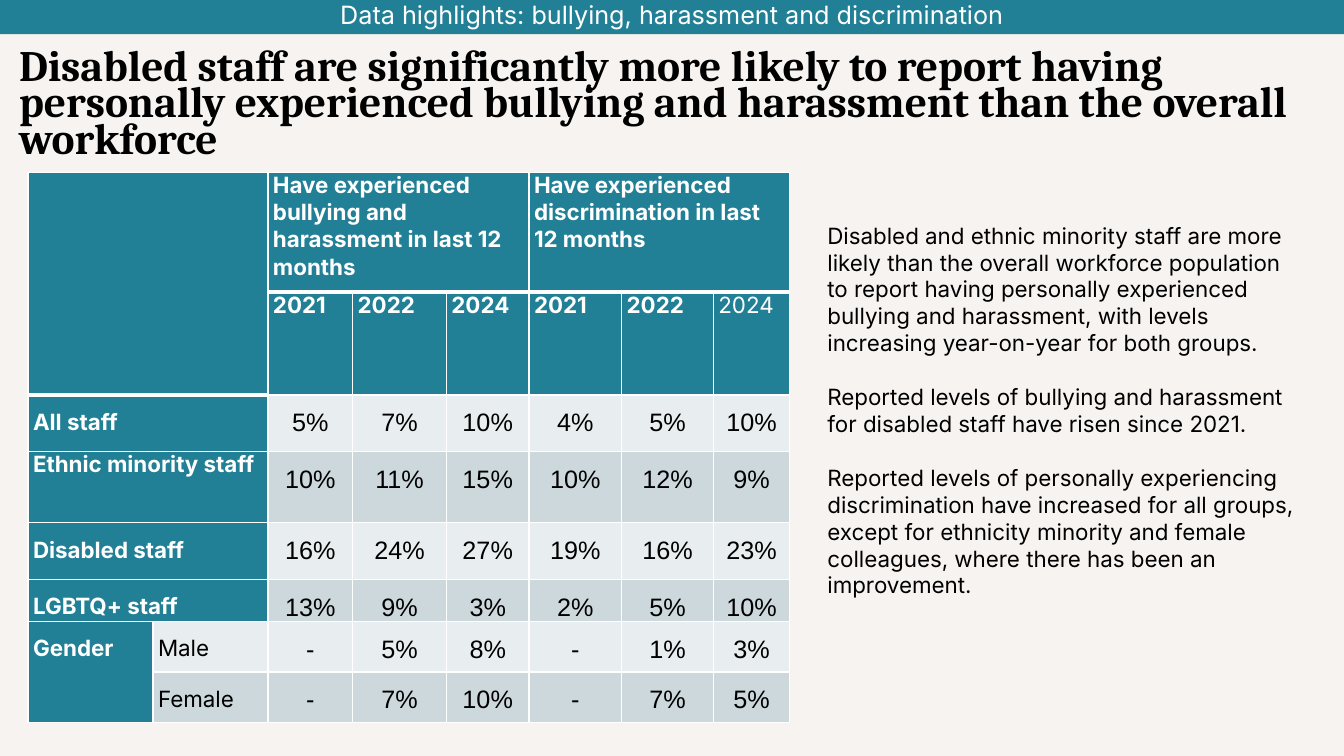
"""Build the slide on bullying, harassment and discrimination data."""
from lxml.etree import SubElement
from pptx import Presentation
from pptx.dml.color import RGBColor
from pptx.enum.shapes import MSO_SHAPE
from pptx.enum.text import MSO_ANCHOR, PP_ALIGN
from pptx.oxml.ns import qn
from pptx.util import Pt

TEAL, WHITE, BLACK = "228096", "FFFFFF", "000000"
BANDS = ["E8EDEF", "CDD8DD"]
COLUMNS = [89.3, 82.1, 60.5, 67, 59, 66.2, 65.5, 54.7]
ROWS = [85.7, 73.4, 40.3, 51.1, 40.3, 28.8, 36, 36]
MERGES = [(0, 0, 1, 1), (0, 2, 0, 4), (0, 5, 0, 7), (6, 0, 7, 0)]
MERGES += [(row, 0, row, 1) for row in range(2, 6)]
CELLS = [
    ["", "", "Have experienced bullying and harassment in last 12 months", "", "",
     "Have experienced discrimination in last 12 months", "", ""],
    ["", "", "2021", "2022", "2024", "2021", "2022", "2024"],
    ["All staff", "", "5%", "7%", "10%", "4%", "5%", "10%"],
    ["Ethnic minority staff", "", "10%", "11%", "15%", "10%", "12%", "9%"],
    ["Disabled staff", "", "16%", "24%", "27%", "19%", "16%", "23%"],
    ["LGBTQ+ staff", "", "13%", "9%", "3%", "2%", "5%", "10%"],
    ["Gender", "Male", "-", "5%", "8%", "-", "1%", "3%"],
    ["", "Female", "-", "7%", "10%", "-", "7%", "5%"],
]
HEADLINE = ("Disabled staff are significantly more likely to report having personally "
            "experienced bullying and harassment than the overall workforce")
COMMENTARY = [
    "Disabled and ethnic minority staff are more likely than the overall workforce population "
    "to report having personally experienced bullying and harassment, with levels increasing "
    "year-on-year for both groups.",
    "Reported levels of bullying and harassment for disabled staff have risen\u00a0since 2021.",
    "Reported levels of personally experiencing discrimination have increased for all groups, "
    "except for ethnicity minority and female colleagues, where there has been an improvement.",
]


def color(hex_code):
    return RGBColor.from_string(hex_code)


class SlideBuilder:
    def __init__(self, slide, font="Inter"):
        self.s = slide
        self.font = font

    def background(self, fill):
        self.s.background.fill.solid()
        self.s.background.fill.fore_color.rgb = color(fill)

    def format(self, p, size, ink, bold=False, font=None, align=PP_ALIGN.LEFT):
        p.alignment = align
        for r in p.runs:
            r.font.size, r.font.bold = Pt(size), bold
            r.font.name = font or self.font
            r.font.color.rgb = color(ink)

    def banner(self, x, y, w, h, text):
        sp = self.s.shapes.add_shape(MSO_SHAPE.RECTANGLE, Pt(x), Pt(y), Pt(w), Pt(h))
        sp.shadow.inherit = False
        sp.fill.solid()
        sp.fill.fore_color.rgb = color(TEAL)
        sp.line.fill.background()
        sp.text_frame.text = text
        sp.text_frame.vertical_anchor = MSO_ANCHOR.MIDDLE
        self.format(sp.text_frame.paragraphs[0], 18, WHITE, align=PP_ALIGN.CENTER)

    def text(self, x, y, w, h, paragraphs, size, bold=False, font=None,
             line=None, gap=0, inset=3.6):
        tf = self.s.shapes.add_textbox(Pt(x), Pt(y), Pt(w), Pt(h)).text_frame
        tf.word_wrap = True
        tf.margin_top = Pt(inset)
        tf.text = "\n".join(paragraphs)
        for i, p in enumerate(tf.paragraphs):
            p.line_spacing = line
            p.space_before = Pt(gap if i else 0)
            self.format(p, size, BLACK, bold, font)

    def border(self, cell, top, bottom):
        tc_pr = cell._tc.get_or_add_tcPr()
        for side, width in zip("LRTB", (1, 1, top, bottom)):
            ln = SubElement(tc_pr, qn(f"a:ln{side}"), w=str(Pt(width)))
            SubElement(SubElement(ln, qn("a:solidFill")), qn("a:srgbClr"), val=WHITE)

    def cell(self, table, row, col, text):
        header = row < 2
        label = col == 0 or (col == 1 and row < 6)
        value = not header and col > 1
        thick = {(0, c) for c in range(2, 8)} | {(1, 0), (1, 1)}
        cell = table.cell(row, col)
        cell.margin_left = cell.margin_right = Pt(3.6)
        cell.margin_top = cell.margin_bottom = 0
        self.border(cell, 3 if (row - 1, col) in thick else 1, 3 if (row, col) in thick else 1)
        cell.fill.solid()
        cell.fill.fore_color.rgb = color(TEAL if header or label else BANDS[row % 2])
        if not text:
            return
        cell.text_frame.text = text
        p = cell.text_frame.paragraphs[0]
        p.space_after = Pt(12)
        if not header and (row, col) != (3, 0):
            p.line_spacing = 1.5
        if value:
            self.format(p, 18, BLACK, font="Arial", align=PP_ALIGN.CENTER)
        else:
            teal = header or label
            self.format(p, 16, WHITE if teal else BLACK, teal and (row, col) != (1, 7))

    def table(self, x, y):
        table = self.s.shapes.add_table(len(ROWS), len(COLUMNS), Pt(x), Pt(y),
                                        Pt(sum(COLUMNS)), Pt(sum(ROWS))).table
        for column, width in zip(table.columns, COLUMNS):
            column.width = Pt(width)
        for row, height in zip(table.rows, ROWS):
            row.height = Pt(height)
        for r, texts in enumerate(CELLS):
            for c, text in enumerate(texts):
                self.cell(table, r, c, text)
        for top, left, bottom, right in MERGES:
            table.cell(top, left).merge(table.cell(bottom, right))


def main():
    prs = Presentation()
    prs.slide_width, prs.slide_height = Pt(960), Pt(540)
    page = SlideBuilder(prs.slides.add_slide(prs.slide_layouts[6]))
    page.background("F7F3F1")
    page.table(20, 123)
    page.text(583.9, 135.4, 356.4, 375.8, COMMENTARY, 16, gap=19.4, inset=23)
    page.text(6.5, 33.8, 953.5, 90, [HEADLINE], 31, bold=True, font="Cambria", line=0.7)
    page.banner(0, -4.3, 960, 28.8, "Data highlights: bullying, harassment and discrimination")
    prs.save("out.pptx")


if __name__ == "__main__":
    main()
